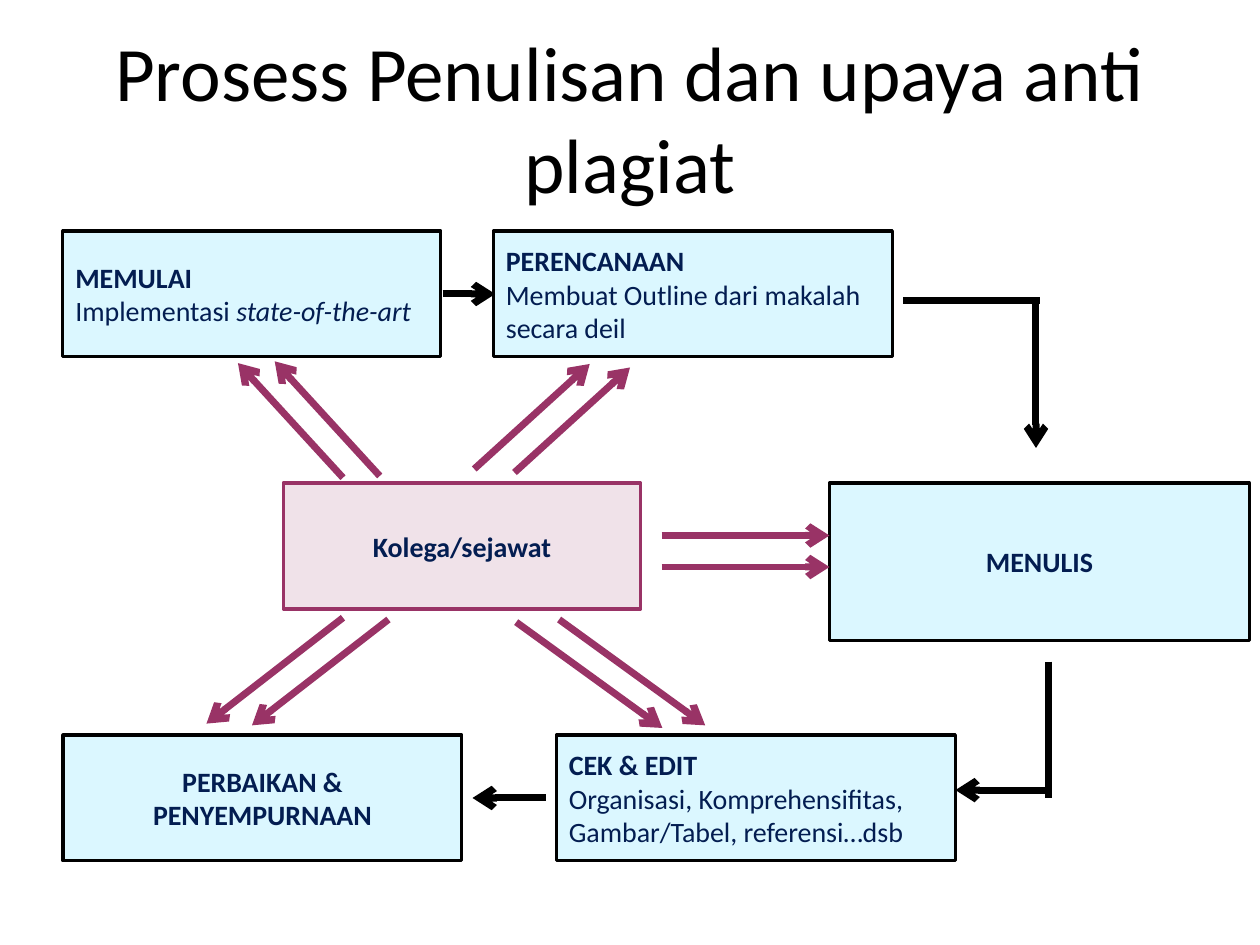
from dataclasses import dataclass

from lxml import etree
from pptx import Presentation
from pptx.dml.color import RGBColor
from pptx.enum import shapes, text
from pptx.oxml import ns
from pptx.util import Pt


@dataclass(frozen=True)
class Theme:
    """Colours, font and sizes of the slide."""
    font: str = "Calibri"
    title_size: int = 44
    body_size: int = 16
    black: str = "000000"
    navy: str = "031D51"
    cyan: str = "00CCFF"
    plum: str = "993366"
    opacity: int = 14
    border: float = 1.75
    peer_border: float = 2.25
    arrow: int = 4


T = Theme()
LEFT, CENTER = text.PP_ALIGN.LEFT, text.PP_ALIGN.CENTER

STEPS = [
    ((0, 0, 216, 72), LEFT, ["MEMULAI", "Implementasi |state-of-the-art"]),
    ((246, 0, 228, 72), LEFT,
     ["PERENCANAAN", "Membuat Outline dari makalah", "secara deil"]),
    ((438, 144, 240, 90), CENTER, ["MENULIS"]),
    ((0, 288, 228, 72), CENTER, ["PERBAIKAN &", "PENYEMPURNAAN"]),
    ((282, 288, 228, 72), LEFT,
     ["CEK & EDIT", "Organisasi, Komprehensifitas,", "Gambar/Tabel, referensi…dsb"]),
]
FLOW = [
    ((217, 36), (247, 36), True),
    ((558, 40), (480, 40), False),
    ((556, 39), (556, 124), True),
    ((563, 246), (563, 324), False),
    ((564, 319.5), (510, 319.5), True),
    ((276, 324), (234, 324), True),
]
PEER_BOX = (126, 144, 204, 72)
PEER_PAIRS = [
    ((160, 141), (100, 75.5), (21, -1)),
    ((235, 136), (301, 76), (23, 2)),
    ((342, 174), (438, 174), (0, 18)),
    ((259, 223.5), (342.5, 284), (24.5, -1.5)),
    ((160, 221), (82, 281.5), (26, 1)),
]


def shift(point, offset):
    """Return the point moved by the offset."""
    return point[0] + offset[0], point[1] + offset[1]


def style(font, size, color, bold=None):
    """Apply the theme font with a size, colour and weight."""
    font.name, font.size, font.bold = T.font, Pt(size), bold
    font.color.rgb = RGBColor.from_string(color)


def add_box(s, origin, box, align, lines, fill, line, width):
    """Draw a translucent box; left-aligned boxes have a bold heading only."""
    x, y = shift(box[:2], origin)
    sp = s.shapes.add_shape(shapes.MSO_SHAPE.RECTANGLE,
                            Pt(x), Pt(y), Pt(box[2]), Pt(box[3]))
    sp.shadow.inherit = False
    sp.fill.solid()
    sp.fill.fore_color.rgb = RGBColor.from_string(fill)
    color = sp._element.spPr.find(".//" + ns.qn("a:srgbClr"))
    etree.SubElement(color, ns.qn("a:alpha"), val=str(T.opacity * 1000))
    sp.line.color.rgb = RGBColor.from_string(line)
    sp.line.width = Pt(width)
    tf = sp.text_frame
    tf.word_wrap = True
    tf.vertical_anchor = text.MSO_ANCHOR.MIDDLE
    for i, content in enumerate(lines):
        p = tf.add_paragraph() if i else tf.paragraphs[0]
        p.alignment = align
        style(p.font, T.body_size, T.navy, align == CENTER or i == 0)
        for j, part in enumerate(content.split("|")):
            r = p.add_run()
            r.text = part
            if j:
                r.font.italic = True


def add_line(s, origin, start, end, color, head=True):
    """Draw a straight line, with an open arrowhead at its end if wanted."""
    ends = shift(start, origin) + shift(end, origin)
    c = s.shapes.add_connector(shapes.MSO_CONNECTOR.STRAIGHT, *map(Pt, ends))
    c.line.color.rgb = RGBColor.from_string(color)
    c.line.width = Pt(T.arrow)
    if head:
        etree.SubElement(c.line._get_or_add_ln(), ns.qn("a:tailEnd"), type="arrow")
    etree.SubElement(c._element.spPr, ns.qn("a:effectLst"))


def add_title(s, box, content):
    """Place and format the title placeholder."""
    sp = s.shapes.title
    sp.left, sp.top, sp.width, sp.height = map(Pt, box)
    tf = sp.text_frame
    tf.text = content
    tf.word_wrap = True
    tf.auto_size = text.MSO_AUTO_SIZE.NONE
    tf.vertical_anchor = text.MSO_ANCHOR.MIDDLE
    p = tf.paragraphs[0]
    p.alignment = CENTER
    style(p.font, T.title_size, T.black)


def add_process(s, origin):
    """Draw the writing steps and the arrows that join them."""
    for box, align, lines in STEPS:
        add_box(s, origin, box, align, lines, T.cyan, T.black, T.border)
    for start, end, head in FLOW:
        add_line(s, origin, start, end, T.black, head)


def add_peers(s, origin):
    """Draw the peer box and its double arrows to the steps."""
    add_box(s, origin, PEER_BOX, CENTER, ["Kolega/sejawat"],
            T.plum, T.plum, T.peer_border)
    for start, end, gap in PEER_PAIRS:
        for offset in ((0, 0), gap):
            add_line(s, origin, shift(start, offset), shift(end, offset), T.plum)


def main():
    """Build and save the slide."""
    prs = Presentation()
    prs.slide_width, prs.slide_height = Pt(720), Pt(540)
    s = prs.slides.add_slide(prs.slide_layouts[5])
    add_title(s, (36, 21.6, 648, 90), "Prosess Penulisan dan upaya anti plagiat")
    origin = (36, 132)
    add_process(s, origin)
    add_peers(s, origin)
    prs.save("out.pptx")


if __name__ == "__main__":
    main()
